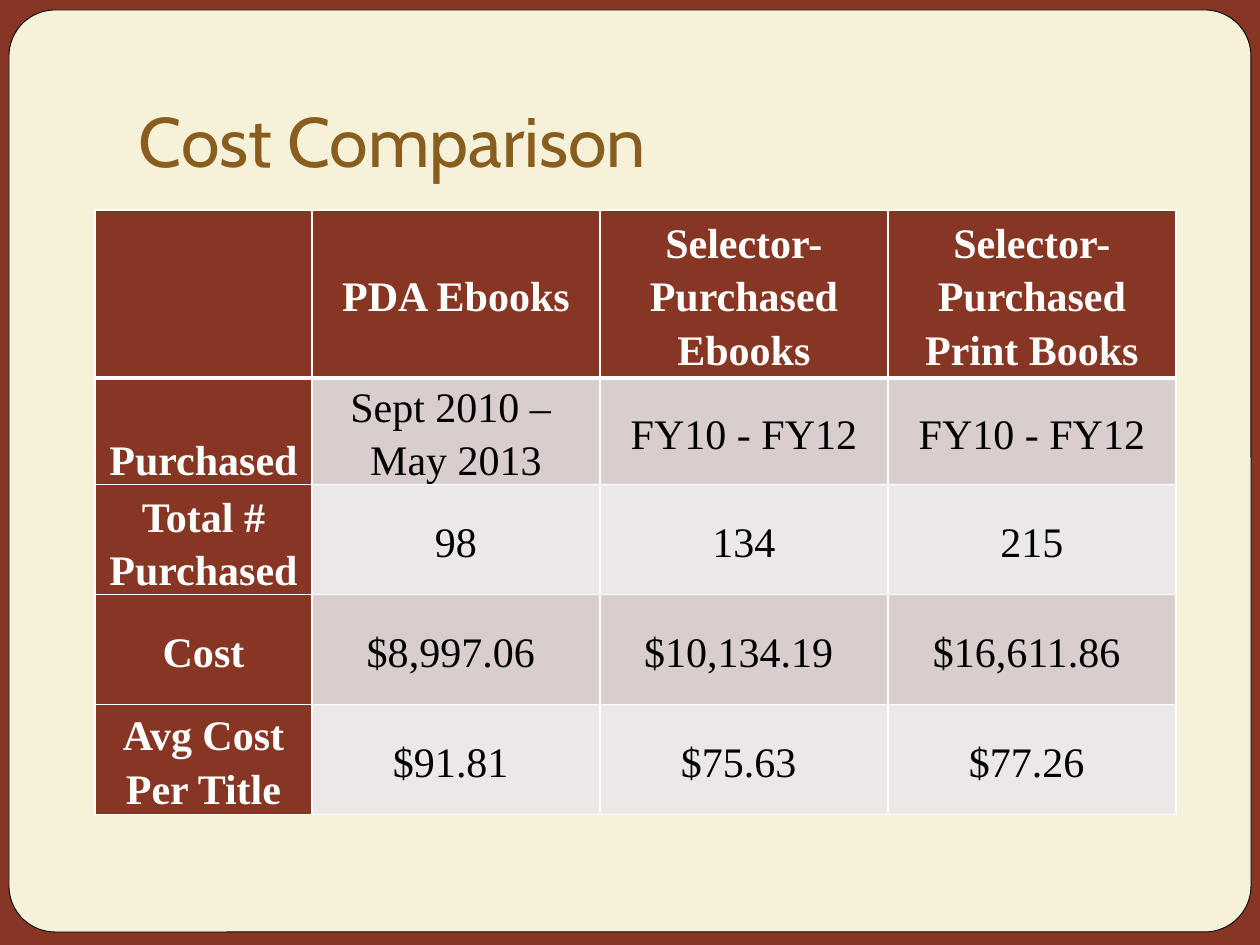
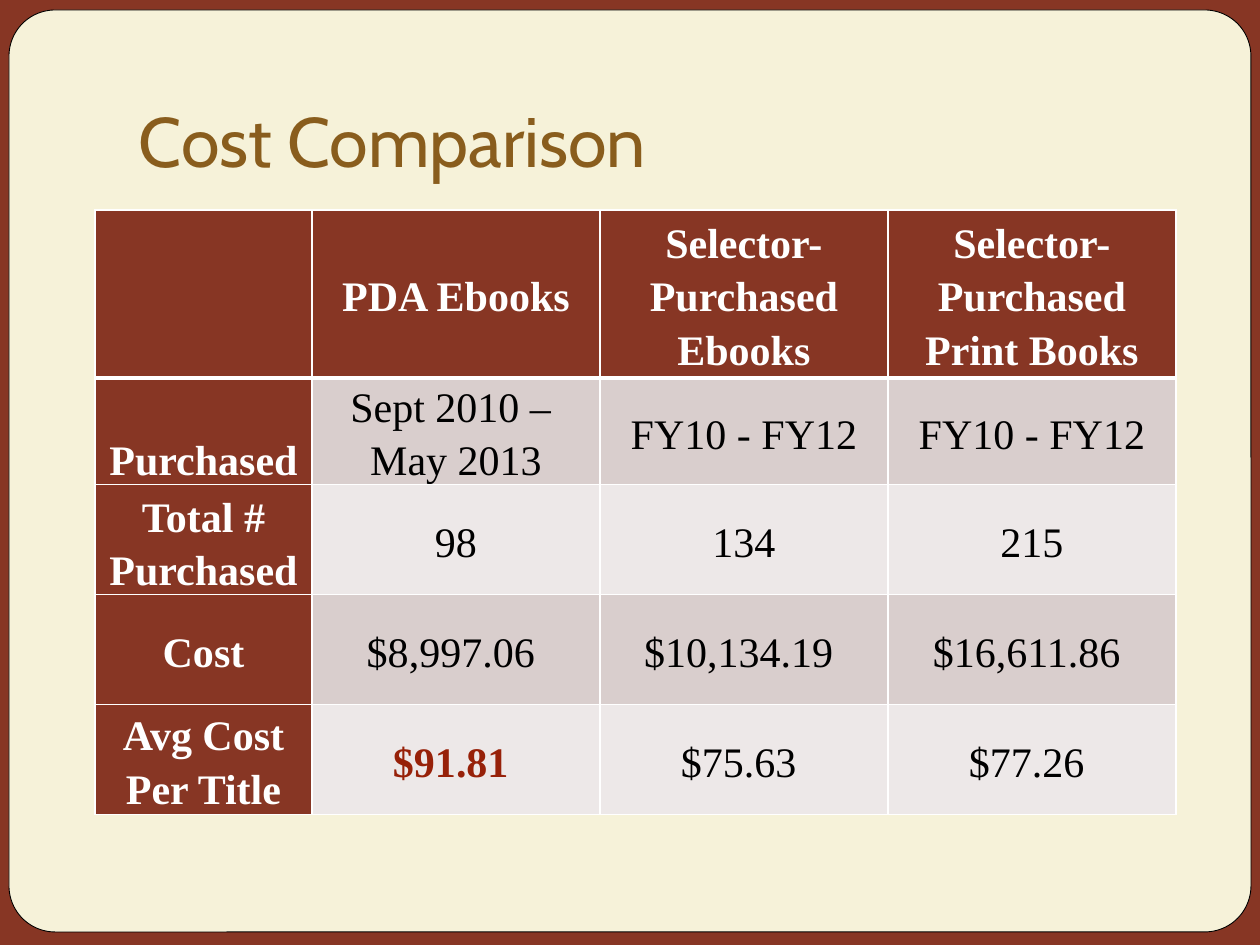
import pptx
import pptx.dml.color
import pptx.enum.shapes
import pptx.enum.text
import pptx.oxml
import pptx.oxml.ns
import pptx.util

PX = 914400 // 126
HUES = {
    "brick": "873624", "cream": "F6F2D9", "gold": "895D1D",
    "odd": "D9CECD", "even": "EDE8E8", "alert": "972109",
    "white": "FFFFFF", "black": "000000",
}
PAGE = (0, 0, 1260, 945)
CARD = (9, 10, 1242, 922)
TITLE = (126, 38, 1071, 157)
GRID = (95, 210, 1081, 631)
COLS = [217, 288, 288, 288]
ROWS = [168, 58, 110, 110, 110]
COSTS = [
    ["", "PDA Ebooks", "Selector-Purchased Ebooks", "Selector-Purchased Print Books"],
    ["Purchased", "Sept 2010 – \nMay 2013", "FY10 - FY12", "FY10 - FY12"],
    ["Total # Purchased", "98", "134", "215"],
    ["Cost", "$8,997.06 ", "$10,134.19 ", "$16,611.86 "],
    ["Avg Cost Per Title", "$91.81 ", "$75.63 ", "$77.26 "],
]
LOW = [(1, 0), (2, 0)]
ANCHOR = pptx.enum.text.MSO_ANCHOR
ALIGN = pptx.enum.text.PP_ALIGN
SHAPE = pptx.enum.shapes.MSO_SHAPE


def emu(box):
    return [n * PX for n in box]


def rgb(name):
    return pptx.dml.color.RGBColor.from_string(HUES[name])


def paint(fill, name):
    fill.solid()
    fill.fore_color.rgb = rgb(name)


def style(frame, font, size, hue, bold, align):
    for para in frame.paragraphs:
        para.alignment = align
        for run in para.runs:
            run.font.name = font
            run.font.size = pptx.util.Pt(size)
            run.font.bold = bold
            run.font.color.rgb = rgb(hue)


def inset(obj, left, top, right, bottom):
    obj.margin_left, obj.margin_top, obj.margin_right, obj.margin_bottom = emu(
        (left, top, right, bottom))


def frame_page(layout, slide):
    """Build the border and card, then move them behind the layout's parts."""
    back = slide.shapes.add_shape(SHAPE.RECTANGLE, *emu(PAGE))
    paint(back.fill, "brick")
    back.line.fill.background()
    card = slide.shapes.add_shape(SHAPE.ROUNDED_RECTANGLE, *emu(CARD))
    card.adjustments[0] = 0.05
    paint(card.fill, "cream")
    card.line.color.rgb = rgb("black")
    card.line.width = pptx.util.Pt(0.5)
    for spot, shape in enumerate((back, card), 2):
        shape.shadow.inherit = False
        layout.shapes.element.insert(spot, shape.element)


def add_title(slide, box, text):
    title = slide.shapes.title
    title.left, title.top, title.width, title.height = emu(box)
    frame = title.text_frame
    frame.text = text
    frame.word_wrap = True
    frame.auto_size = pptx.enum.text.MSO_AUTO_SIZE.NONE
    frame.vertical_anchor = ANCHOR.BOTTOM
    inset(frame, 13, 6, 13, 13)
    style(frame, "Cabin", 40, "gold", False, ALIGN.LEFT)


def edge(cell, row):
    """Draw white cell borders, thick below the header."""
    wide = {"T": 3 if row == 1 else 1, "B": 3 if row == 0 else 1}
    props = cell._tc.get_or_add_tcPr()
    for spot, side in enumerate("LRTB"):
        width = pptx.util.Pt(wide.get(side, 1))
        props.insert(spot, pptx.oxml.parse_xml(
            f'<a:ln{side} {pptx.oxml.ns.nsdecls("a")} w="{width}"><a:solidFill>'
            f'<a:srgbClr val="{HUES["white"]}"/></a:solidFill></a:ln{side}>'))


def fill_cell(cell, row, col, text, alert):
    head = row == 0 or col == 0
    cell.text_frame.text = text
    cell.vertical_anchor = ANCHOR.BOTTOM if (row, col) in LOW else ANCHOR.MIDDLE
    inset(cell, 9, 0, 9, 0)
    paint(cell.fill, "brick" if head else "odd" if row % 2 else "even")
    hue = "white" if head else "alert" if alert else "black"
    style(cell.text_frame, "Times New Roman", 24, hue, head or alert, ALIGN.CENTER)
    for para in cell.text_frame.paragraphs:
        para.line_spacing = 1.15
    edge(cell, row)


def add_grid(slide, box, alert):
    shape = slide.shapes.add_table(len(ROWS), len(COLS), *emu(box))
    table = shape.table
    for col, width in zip(table.columns, COLS):
        col.width = width * PX
    for row, height in zip(table.rows, ROWS):
        row.height = height * PX
    shape.height = box[3] * PX
    for r, line in enumerate(COSTS):
        for c, text in enumerate(line):
            fill_cell(table.cell(r, c), r, c, text, (r, c) == alert)


def main():
    deck = pptx.Presentation()
    deck.slide_width, deck.slide_height = emu(PAGE[2:])
    layout = deck.slide_layouts[5]
    for alert in (None, (4, 1)):
        slide = deck.slides.add_slide(layout)
        if alert is None:
            frame_page(layout, slide)
        add_title(slide, TITLE, "Cost Comparison")
        add_grid(slide, GRID, alert)
    deck.save("out.pptx")


if __name__ == "__main__":
    main()
